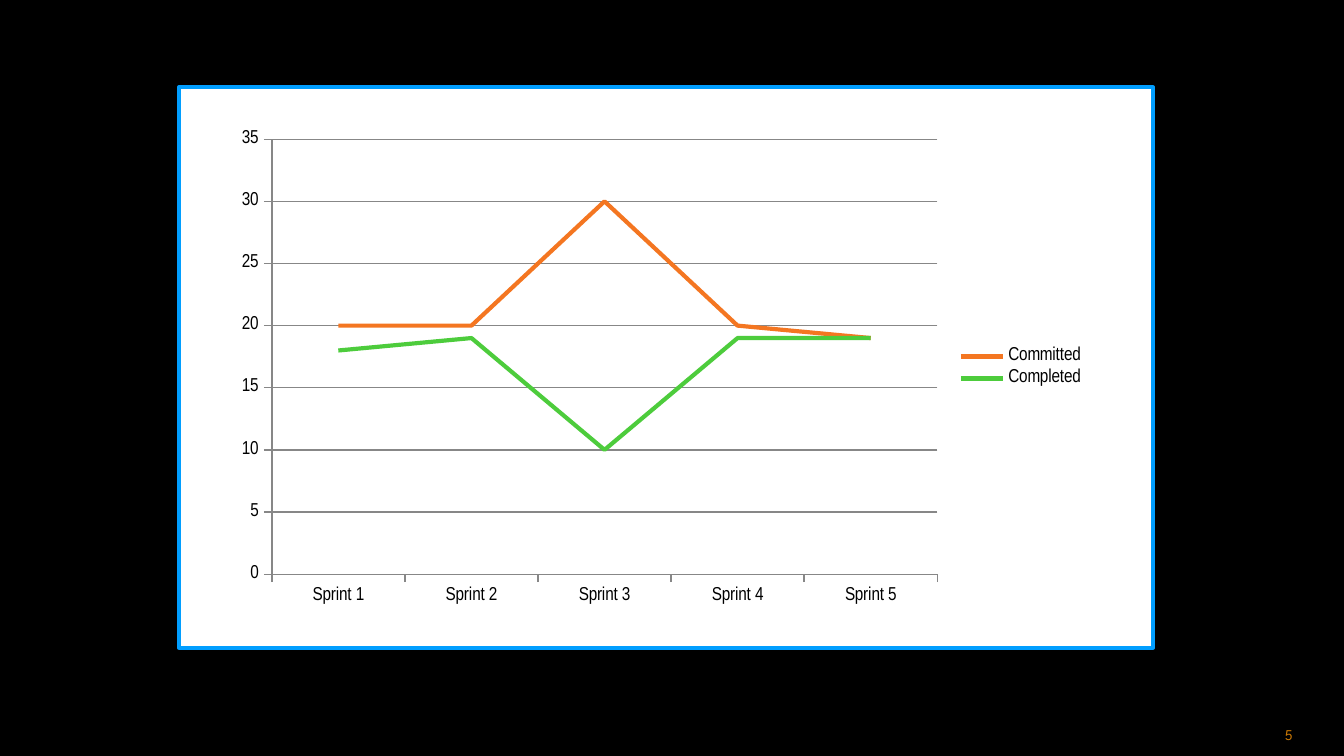
"""Build the slide comparing committed and completed work per sprint."""
from dataclasses import dataclass

from pptx import Presentation
from pptx.chart.data import CategoryChartData
from pptx.dml.color import RGBColor
from pptx.enum.chart import XL_CHART_TYPE, XL_LEGEND_POSITION, XL_MARKER_STYLE, XL_TICK_MARK
from pptx.enum.shapes import MSO_SHAPE
from pptx.enum.text import MSO_ANCHOR, PP_ALIGN
from pptx.slide import Slide
from pptx.util import Inches, Pt

BLACK = RGBColor(0x00, 0x00, 0x00)
WHITE = RGBColor(0xFF, 0xFF, 0xFF)
BLUE = RGBColor(0x01, 0x9E, 0xFF)
ORANGE = RGBColor(0xF4, 0x76, 0x21)
GREEN = RGBColor(0x4D, 0xCC, 0x3C)
GRAY = RGBColor(0x87, 0x87, 0x87)
AMBER = RGBColor(0xCA, 0x78, 0x05)


@dataclass(frozen=True)
class SprintSeries:
    name: str
    values: tuple[int, ...]
    color: RGBColor


SPRINTS = [f"Sprint {number}" for number in range(1, 6)]
SERIES = (
    SprintSeries("Committed", (20, 20, 30, 20, 19), ORANGE),
    SprintSeries("Completed", (18, 19, 10, 19, 19), GREEN),
)


def add_page_number(page: Slide, number: int) -> None:
    box = page.shapes.add_textbox(Inches(9.33), Inches(5.39), Inches(0.52), Inches(0.15))
    frame = box.text_frame
    frame.word_wrap = True
    frame.vertical_anchor = MSO_ANCHOR.MIDDLE
    frame.margin_left = frame.margin_right = frame.margin_top = frame.margin_bottom = 0
    para = frame.paragraphs[0]
    para.alignment = PP_ALIGN.CENTER
    span = para.add_run()
    span.text = str(number)
    span.font.name = "League Spartan"
    span.font.size = Pt(8)
    span.font.color.rgb = AMBER


def add_panel(page: Slide) -> None:
    panel = page.shapes.add_shape(
        MSO_SHAPE.RECTANGLE, Inches(1.33), Inches(0.65), Inches(7.25), Inches(4.17)
    )
    panel.shadow.inherit = False
    panel.fill.solid()
    panel.fill.fore_color.rgb = WHITE
    panel.line.color.rgb = BLUE
    panel.line.width = Pt(2)


def add_sprint_chart(page: Slide) -> None:
    data = CategoryChartData()
    data.categories = SPRINTS
    for entry in SERIES:
        data.add_series(entry.name, entry.values)
    chart = page.shapes.add_chart(
        XL_CHART_TYPE.LINE, Inches(1.67), Inches(0.9), Inches(6.5), Inches(3.67), data
    ).chart
    chart.has_title = False
    chart.font.name = "Arial Narrow"
    chart.font.size = Pt(10)
    chart.font.color.rgb = BLACK
    chart.has_legend = True
    chart.legend.position = XL_LEGEND_POSITION.RIGHT
    chart.legend.include_in_layout = False
    chart.plots[0].vary_by_categories = False
    for axis in (chart.category_axis, chart.value_axis):
        axis.major_tick_mark = XL_TICK_MARK.OUTSIDE
        axis.format.line.color.rgb = GRAY
        axis.format.line.width = Pt(0.75)
    scale = chart.value_axis
    scale.has_major_gridlines = True
    scale.major_gridlines.format.line.color.rgb = GRAY
    scale.major_gridlines.format.line.width = Pt(0.75)
    for series, entry in zip(chart.plots[0].series, SERIES):
        series.smooth = False
        series.marker.style = XL_MARKER_STYLE.NONE
        series.format.line.color.rgb = entry.color
        series.format.line.width = Pt(2.25)


def main() -> None:
    deck = Presentation()
    deck.slide_width = Inches(10)
    deck.slide_height = deck.slide_width * 9 // 16
    page = deck.slides.add_slide(deck.slide_layouts[6])
    page.background.fill.solid()
    page.background.fill.fore_color.rgb = BLACK
    add_page_number(page, 5)
    add_panel(page)
    add_sprint_chart(page)
    deck.save("out.pptx")


if __name__ == "__main__":
    main()
